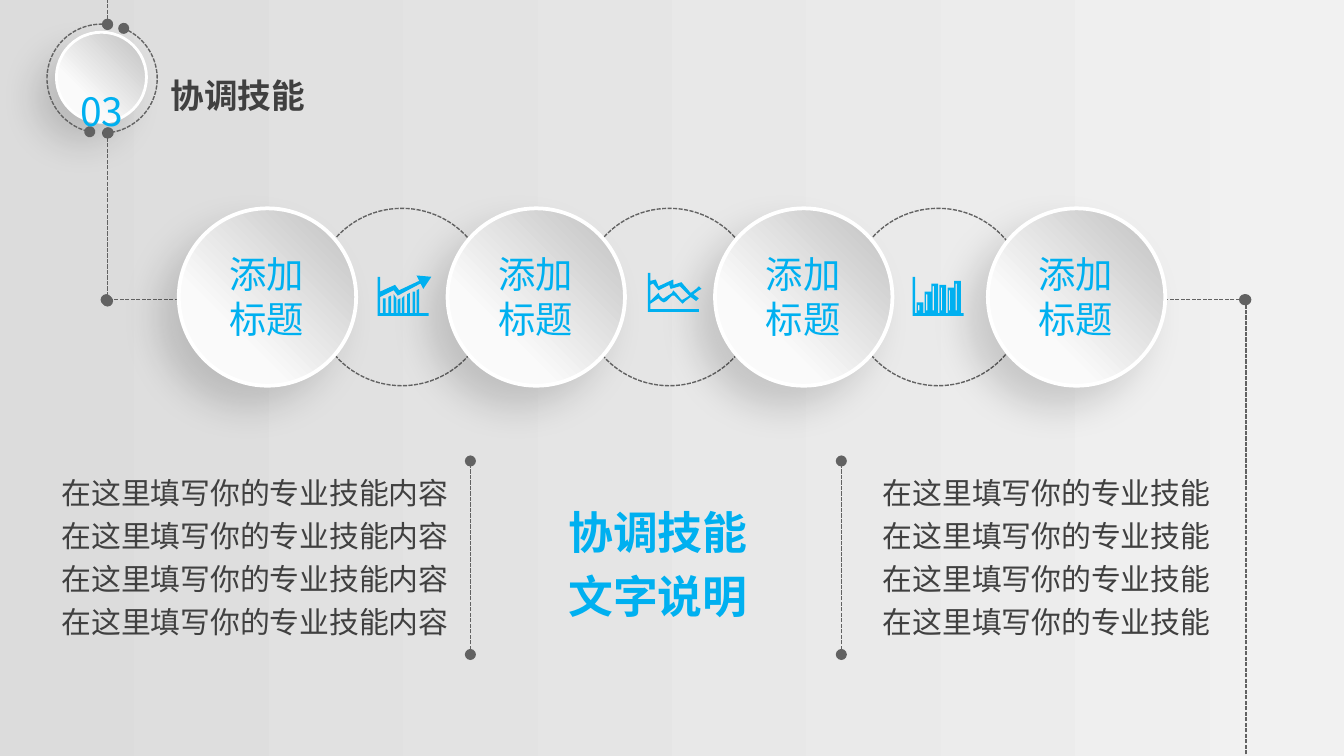
from lxml import etree
from pptx import Presentation
from pptx import util as u
from pptx.dml.color import RGBColor
from pptx.enum import dml, shapes, text
from pptx.oxml.ns import qn

PX = u.Inches(1) // 100
COLORS = {
    "accent": "00B0F0", "ink": "404040", "line": "626262", "white": "FFFFFF",
    "disc_dark": "BFBFBF", "disc_light": "FAFAFA",
    "back_dark": "DCDCDC", "back_light": "F1F1F1", "shadow": "000000",
}
FONT = "Noto Sans CJK SC"
TOP, MIDDLE = text.MSO_ANCHOR.TOP, text.MSO_ANCHOR.MIDDLE
CENTER = text.PP_ALIGN.CENTER


def rgb(name):
    return RGBColor.from_string(COLORS[name])


def px(*lengths):
    return [length * PX for length in lengths]


def add_xml(parent, tag, **attributes):
    child = etree.SubElement(parent, qn(tag))
    for key, value in attributes.items():
        child.set(key, str(value))
    return child


class Board:
    """Holds the slide being filled and the style shared by its elements."""

    def __init__(self, slide):
        self.slide = slide
        self.shapes = slide.shapes

    def gradient(self, fill, stops, clockwise):
        fill.gradient()
        fill.gradient_angle = (360 - clockwise) % 360
        for stop, (position, color) in zip(fill.gradient_stops, stops):
            stop.position = position
            stop.color.rgb = rgb(color)

    def dash(self, shape):
        """Dashed thin outline with a dot at each open end."""
        shape.line.color.rgb = rgb("line")
        shape.line.width = u.Pt(0.75)
        shape.line.dash_style = dml.MSO_LINE.SQUARE_DOT
        ln = shape.line._get_or_add_ln()
        for end in ("a:headEnd", "a:tailEnd"):
            add_xml(ln, end, type="oval")

    def line(self, x1, y1, x2, y2):
        connector = self.shapes.add_connector(
            shapes.MSO_CONNECTOR.STRAIGHT, *px(x1, y1, x2, y2))
        self.dash(connector)
        add_xml(connector._element.spPr, "a:effectLst")

    def ring(self, x, y, size, kind=shapes.MSO_SHAPE.OVAL, angles=(), flip=False):
        ring = self.shapes.add_shape(kind, *px(x, y, size, size))
        ring.shadow.inherit = False
        ring.fill.background()
        for i, angle in enumerate(angles):
            ring.adjustments[i] = angle
        if flip:
            ring._element.spPr.find(qn("a:xfrm")).set("flipH", "1")
        self.dash(ring)

    def disc(self, x, y, size, border):
        disc = self.shapes.add_shape(shapes.MSO_SHAPE.OVAL, *px(x, y, size, size))
        self.gradient(disc.fill, [(0, "disc_dark"), (0.7, "disc_light")], 135)
        disc.line.color.rgb = rgb("white")
        disc.line.width = u.Pt(border)
        disc.shadow.inherit = False
        effects = disc._element.spPr.find(qn("a:effectLst"))
        shadow = add_xml(effects, "a:outerShdw", blurRad=u.Pt(20), dist=u.Pt(15),
                         dir=135 * 60000, algn="tr", rotWithShape=0)
        color = add_xml(shadow, "a:srgbClr", val=COLORS["shadow"])
        add_xml(color, "a:alpha", val=15000)

    def icon(self, *contours):
        first, *holes = contours
        builder = self.shapes.build_freeform(*first[0], scale=PX)
        builder.add_line_segments(first[1:], close=True)
        for hole in holes:
            builder.move_to(*hole[0])
            builder.add_line_segments(hole[1:], close=True)
        icon = builder.convert_to_shape()
        icon.shadow.inherit = False
        icon.fill.solid()
        icon.fill.fore_color.rgb = rgb("accent")
        icon.line.fill.background()

    def set_text(self, box, lines, size, color, wrap=False, anchor=TOP,
                 align=text.PP_ALIGN.LEFT, spacing=1.0, bold=False, baseline=0):
        frame = box.text_frame
        frame.text = "\n".join(lines)
        frame_format = {"word_wrap": wrap, "vertical_anchor": anchor,
                        "auto_size": text.MSO_AUTO_SIZE.SHAPE_TO_FIT_TEXT}
        for key, value in frame_format.items():
            setattr(frame, key, value)
        font_format = {"name": FONT, "size": u.Pt(size), "bold": bold}
        for paragraph in frame.paragraphs:
            paragraph.alignment = align
            paragraph.line_spacing = spacing
            for run in paragraph.runs:
                for key, value in font_format.items():
                    setattr(run.font, key, value)
                run.font.color.rgb = rgb(color)
                properties = run._r.get_or_add_rPr()
                add_xml(properties, "a:ea", typeface=FONT)
                if baseline:
                    properties.set("baseline", str(baseline * 1000))

    def label(self, x, y, w, h, lines, size, color, **style):
        box = self.shapes.add_textbox(*px(x, y, w, h))
        self.set_text(box, lines, size, color, **style)

    def title(self, x, y, w, h, words, size):
        title = self.shapes.title
        title.left, title.top, title.width, title.height = px(x, y, w, h)
        self.set_text(title, [words], size, "ink", bold=True)


def bar_icon(left, top, bottom, bars):
    """Contours of a bar chart: the axes with bars, then a slot in each bar."""
    outline = [(left + 2, bottom - 2)]
    slots = []
    for x, y in bars:
        outline += [(x, bottom - 2), (x, y), (x + 5, y), (x + 5, bottom - 2)]
        slots.append([(x + 1, y + 2), (x + 2, y + 2),
                      (x + 2, bottom - 4), (x + 1, bottom - 4)])
    outline += [(left + 38, bottom - 2), (left + 38, bottom), (left, bottom),
                (left, top), (left + 2, top)]
    return [outline, *slots]


GROWTH_ICON = [
    (283, 233), (285, 233), (285, 222), (287, 222), (287, 233), (289, 233),
    (289, 221), (291, 220), (291, 233), (293, 233), (293, 219), (295, 222),
    (295, 233), (296, 233), (296, 223), (298, 222), (298, 233), (299, 233),
    (299, 222), (301, 220), (301, 233), (303, 233), (303, 219), (305, 218),
    (305, 233), (307, 233), (307, 217), (309, 217), (309, 233), (310, 233),
    (310, 216), (312, 215), (312, 233), (319, 233), (319, 235), (281, 235),
    (281, 206), (283, 206), (283, 217), (294, 212), (297, 216), (312, 209),
    (310, 205), (321, 206), (315, 215), (313, 211), (296, 220), (293, 216),
    (283, 221)]
TREND_ICON = [
    (484, 230), (520, 230), (520, 232), (482, 232), (482, 203), (484, 203),
    (484, 209), (488, 208), (490, 213), (501, 208), (501, 212), (507, 210),
    (514, 218), (518, 215), (520, 213), (522, 215), (520, 216), (516, 219),
    (520, 222), (518, 224), (514, 221), (510, 224), (508, 226), (506, 224),
    (502, 220), (500, 220), (496, 224), (494, 225), (492, 224), (490, 222),
    (484, 226)]
TREND_HOLE = [
    (508, 223), (513, 220), (506, 213), (499, 215), (498, 212), (490, 216),
    (486, 211), (484, 212), (484, 224), (488, 220), (490, 218), (491, 220),
    (493, 222), (494, 222), (500, 218), (501, 216), (503, 218), (507, 223)]
BARS = [(682, 225), (688, 217), (693, 211), (699, 212), (705, 214), (710, 209)]


def main():
    deck = Presentation()
    deck.slide_width = 1000 * PX
    deck.slide_height = deck.slide_width * 9 // 16
    slide = deck.slides.add_slide(deck.slide_layouts[5])
    board = Board(slide)
    board.gradient(slide.background.fill, [(0, "back_dark"), (1, "back_light")], 0)
    board.title(117, 51, 121, 40, "协调技能", 18)

    for route in [(198, 223, 79, 223), (926, 223, 807, 223), (927, 573, 927, 223),
                  (80, 99, 80, 224), (80, -21, 80, 18),
                  (350, 487, 350, 343), (626, 487, 626, 343)]:
        board.line(*route)

    for x in (233, 432, 632):
        board.ring(x, 155, 132)
    disc_lefts = (133, 333, 532, 735)
    for x in disc_lefts:
        board.disc(x, 155, 132, 2)
    for x in disc_lefts:
        board.label(x + 15, 182, 101, 77, ["添加", "标题"], 20, "accent",
                    wrap=True, anchor=MIDDLE, align=CENTER)
    board.icon(GROWTH_ICON)
    board.icon(TREND_ICON, TREND_HOLE)
    board.icon(*bar_icon(679, 206, 235, BARS))

    board.disc(42, 24, 67, 1.5)
    arc = shapes.MSO_SHAPE.ARC
    board.ring(35, 18, 81, arc, (158.1, 46.57), flip=True)
    board.ring(36, 18, 81, arc, (175.58, 50.57))
    board.label(46, 33, 60, 64, ["03"], 36, "accent", anchor=MIDDLE,
                align=CENTER, spacing=1.5, baseline=12)

    board.label(413, 364, 155, 103, ["协调技能", "文字说明"], 24, "accent",
                anchor=MIDDLE, spacing=1.2, bold=True)
    for x, skill in [(36, "在这里填写你的专业技能内容"), (647, "在这里填写你的专业技能")]:
        board.label(x, 343, 381, 172, [skill] * 4, 16, "ink", wrap=True, spacing=1.2)

    deck.save("out.pptx")


if __name__ == "__main__":
    main()
